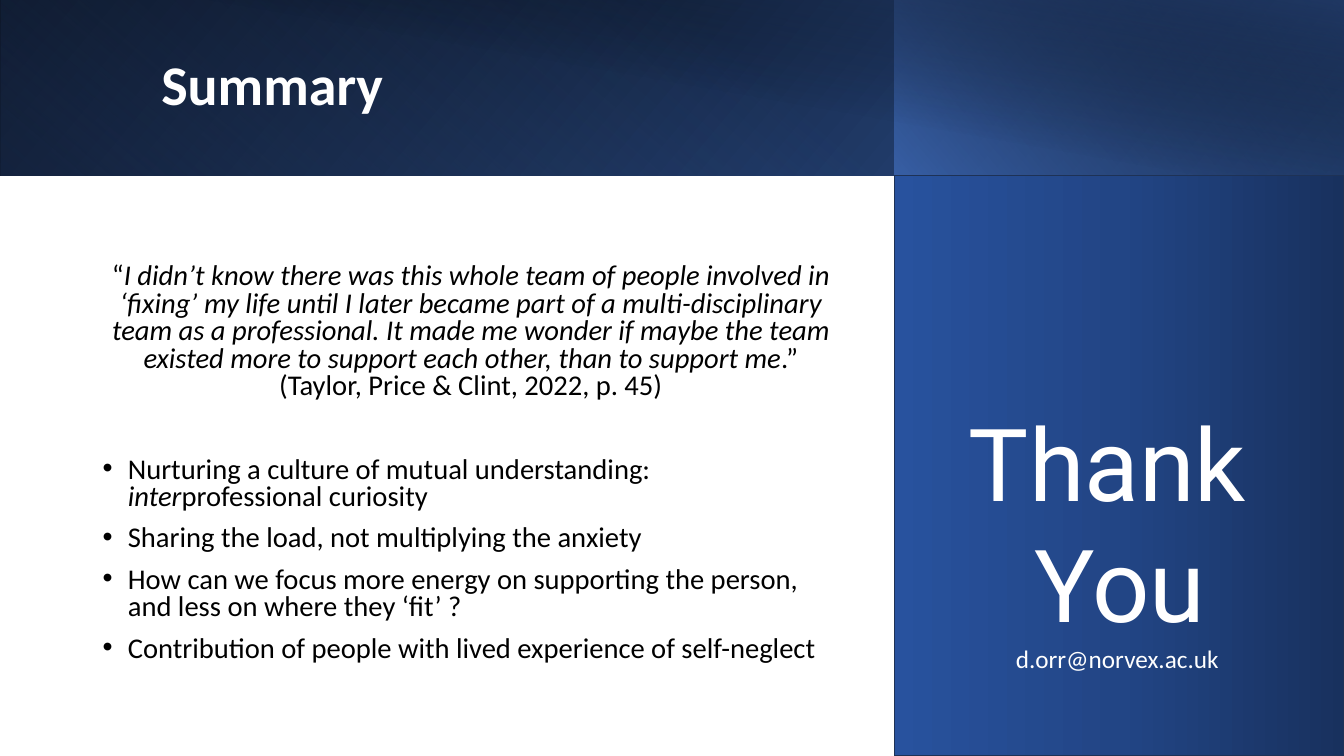
from lxml import etree
from pptx import Presentation
from pptx.dml.color import RGBColor
from pptx.enum.shapes import MSO_SHAPE
from pptx.enum.text import MSO_ANCHOR, MSO_AUTO_SIZE, PP_ALIGN
from pptx.oxml.ns import qn
from pptx.util import Inches, Pt

WIDTH, HEIGHT = Inches(13.33), Inches(7.5)
SPLIT, BAND = 66.54, 23.2
BLACK = RGBColor(0x00, 0x00, 0x00)
WHITE = RGBColor(0xFF, 0xFF, 0xFF)
BLUE = RGBColor(0x44, 0x72, 0xC4)
MID_BLUE = RGBColor(0x2F, 0x55, 0x97)
NAVY = RGBColor(0x20, 0x38, 0x64)
PANEL_DARK = RGBColor(0x18, 0x31, 0x5E)
PANEL_MID = RGBColor(0x22, 0x45, 0x85)
PANEL_LIGHT = RGBColor(0x28, 0x52, 0x9E)
PANEL_EDGE = RGBColor(0x1E, 0x32, 0x56)

QUOTE = [
    ("“", False),
    ("I didn’t know there was this whole team of people involved in ‘fixing’ my life "
     "until I later became part of a multi-disciplinary team as a professional. "
     "It made me wonder if maybe the team existed more to support each other, "
     "than to support me", True),
    (".” (Taylor, Price & Clint, 2022, p. 45)", False),
]
BULLETS = [
    [("Nurturing a culture of mutual understanding: ", False),
     ("inter", True), ("professional curiosity", False)],
    [("Sharing the load, not multiplying the anxiety", False)],
    [("How can we focus more energy on supporting the person, "
      "and less on where they ‘fit’ ?", False)],
    [("Contribution of people with lived experience of self-neglect", False)],
]
CLOSING = [("Thank ", 72, "Roboto"), ("You", 72, "Roboto"),
           ("d.orr@norvex.ac.uk ", 18, "Calibri")]


def area(left, top, width, height):
    return (int(WIDTH * left / 100), int(HEIGHT * top / 100),
            int(WIDTH * width / 100), int(HEIGHT * height / 100))


def gradient(sp, stops, angle):
    sp.fill.background()
    old = sp._element.spPr.find(qn("a:noFill"))
    grad = etree.Element(qn("a:gradFill"), rotWithShape="1")
    stop_list = etree.SubElement(grad, qn("a:gsLst"))
    for position, color, alpha in stops:
        stop = etree.SubElement(stop_list, qn("a:gs"), pos=str(position * 1000))
        value = etree.SubElement(stop, qn("a:srgbClr"), val=str(color))
        if alpha < 100:
            etree.SubElement(value, qn("a:alpha"), val=str(alpha * 1000))
    etree.SubElement(grad, qn("a:lin"), ang=str(angle * 60000), scaled="0")
    old.getparent().replace(old, grad)


def add_block(s, box, stops, angle, flip=False, rotation=0, edge=None):
    sp = s.shapes.add_shape(MSO_SHAPE.RECTANGLE, *area(*box))
    sp.shadow.inherit = False
    sp.rotation = rotation
    if flip:
        sp._element.spPr.find(qn("a:xfrm")).set("flipH", "1")
    gradient(sp, stops, angle)
    if edge is None:
        sp.line.fill.background()
    else:
        sp.line.color.rgb = edge
        sp.line.width = Pt(1)


def format_run(r, size, color, font="Calibri", bold=False, italic=False):
    r.font.name = font
    r.font.size = Pt(size)
    r.font.color.rgb = color
    r.font.bold = bold
    r.font.italic = italic


def add_text(s, box):
    tf = s.shapes.add_textbox(*area(*box)).text_frame
    tf.word_wrap = True
    return tf


def next_paragraph(tf, index):
    return tf.add_paragraph() if index else tf.paragraphs[0]


def set_title(s, text):
    sp = s.shapes.title
    sp.left, sp.top, sp.width, sp.height = area(11.25, 0, 81.17, BAND)
    s.shapes._spTree.append(sp._element)
    tf = sp.text_frame
    tf.text = text
    tf.auto_size = MSO_AUTO_SIZE.NONE
    tf.vertical_anchor = MSO_ANCHOR.MIDDLE
    p = tf.paragraphs[0]
    p.alignment = PP_ALIGN.LEFT
    p.line_spacing = 0.9
    format_run(p.runs[0], 40, WHITE, bold=True)


def add_bullet(p):
    pPr = p._p.get_or_add_pPr()
    pPr.set("marL", str(Inches(0.25)))
    pPr.set("indent", str(-Inches(0.25)))
    etree.SubElement(pPr, qn("a:buFont"), typeface="Arial")
    etree.SubElement(pPr, qn("a:buChar"), char="•")


def add_summary(s):
    tf = add_text(s, (6.9, 34.27, 56.26, 55.87))
    for index, parts in enumerate([QUOTE, *BULLETS]):
        p = next_paragraph(tf, index)
        p.line_spacing = 0.8
        p.space_before = Pt({0: 0, 1: 40}.get(index, 10))
        if index:
            add_bullet(p)
        else:
            p.alignment = PP_ALIGN.CENTER
        for text, italic in parts:
            r = p.add_run()
            r.text = text
            format_run(r, 20.4, BLACK, italic=italic)


def add_closing(s):
    tf = add_text(s, (69.54, 52.4, 27.61, 37.73))
    for index, (text, size, font) in enumerate(CLOSING):
        p = next_paragraph(tf, index)
        p.text = text
        p.alignment = PP_ALIGN.CENTER
        format_run(p.runs[0], size, WHITE, font)


def main():
    prs = Presentation()
    prs.slide_width, prs.slide_height = WIDTH, HEIGHT
    s = prs.slides.add_slide(prs.slide_layouts[5])
    add_block(s, (0, 0, 100, BAND),
              [(0, BLACK, 100), (100, MID_BLUE, 100)], 140, flip=True)
    add_block(s, (0, 0, SPLIT, BAND),
              [(20, BLUE, 0), (100, NAVY, 55)], 230, flip=True, rotation=180)
    add_block(s, (SPLIT, 0, 100 - SPLIT, BAND),
              [(0, BLUE, 66), (100, BLACK, 30)], 220, flip=True)
    add_block(s, (3.75, 0, 96.25, BAND),
              [(50, BLACK, 0), (99, NAVY, 52)], 280)
    set_title(s, "Summary")
    add_summary(s)
    add_block(s, (SPLIT, BAND, 100 - SPLIT, 100 - BAND),
              [(0, PANEL_DARK, 100), (50, PANEL_MID, 100), (100, PANEL_LIGHT, 100)],
              180, edge=PANEL_EDGE)
    add_closing(s)
    prs.save("out.pptx")


if __name__ == "__main__":
    main()
